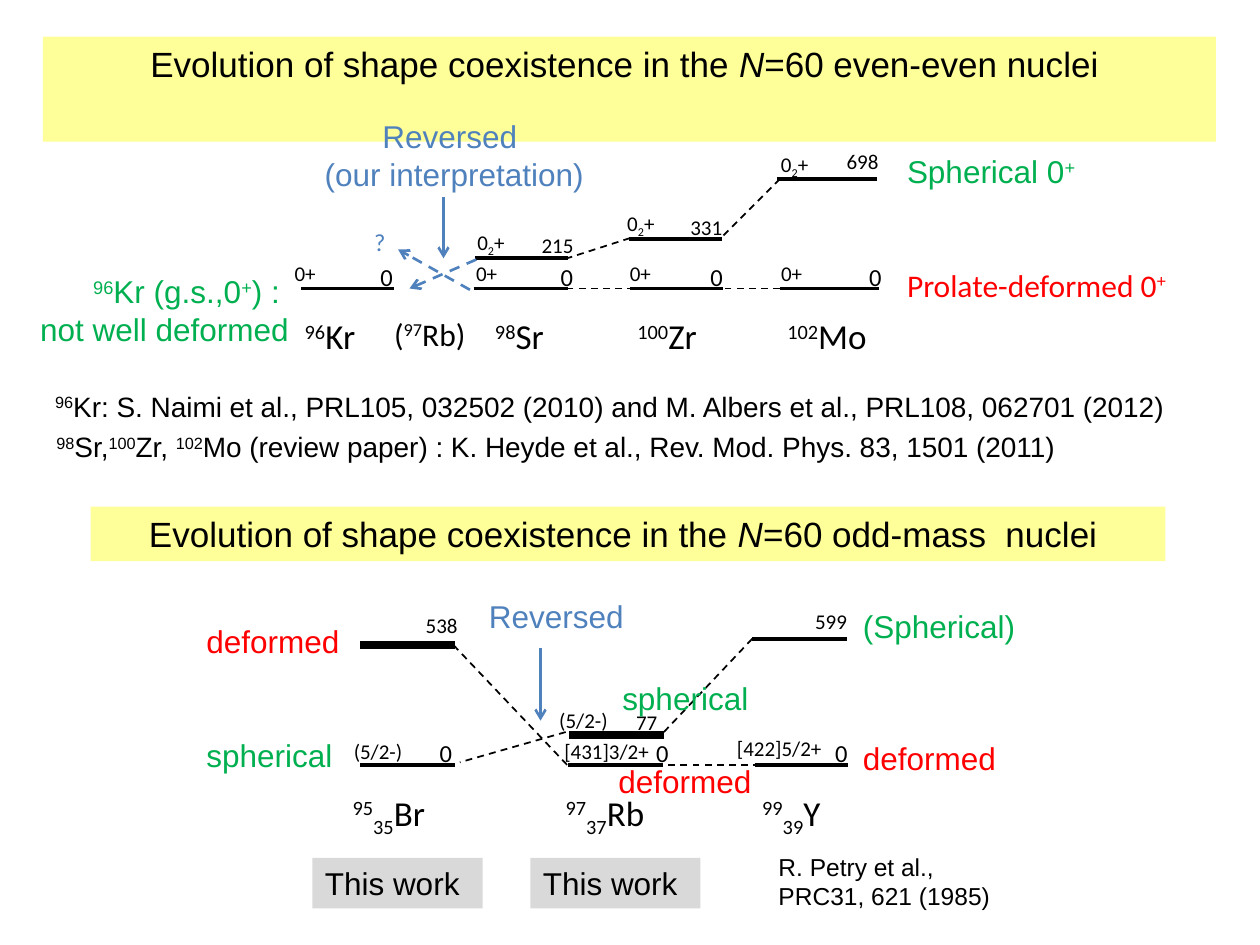
from lxml import etree
from pptx import Presentation
from pptx.dml.color import RGBColor
from pptx.enum.dml import MSO_LINE
from pptx.enum.shapes import MSO_CONNECTOR, MSO_SHAPE
from pptx.enum.text import MSO_ANCHOR, MSO_AUTO_SIZE, PP_ALIGN
from pptx.oxml.ns import qn
from pptx.util import Cm, Pt

STRAIGHT = MSO_CONNECTOR.STRAIGHT
DASH = MSO_LINE.DASH
RECTANGLE = MSO_SHAPE.RECTANGLE
TOP = MSO_ANCHOR.TOP
FIT = MSO_AUTO_SIZE.SHAPE_TO_FIT_TEXT
LEFT, CENTER, RIGHT = PP_ALIGN.LEFT, PP_ALIGN.CENTER, PP_ALIGN.RIGHT

COLORS = {"black": "000000", "red": "FF0000", "green": "00B050",
          "blue": "4F81BD", "yellow": "FFFF99", "gray": "D9D9D9"}
UNIT = 2.54  # the layout grid is in units of 2.54 cm
MARKS = {"^": "30000", "_": "-25000", "*": None}  # super, sub, italic

prs = Presentation()
prs.slide_width, prs.slide_height = Cm(25.4), Cm(19.05)
slide = prs.slides.add_slide(prs.slide_layouts[5])
shapes = slide.shapes


def write(box, text, size, font="Calibri", color="black", align=LEFT, wrap=False):
    """Fill a box; ^sup^, _sub_ and *italic* mark up parts of the text."""
    frame = box.text_frame
    frame.word_wrap, frame.auto_size, frame.vertical_anchor = wrap, FIT, TOP
    for number, content in enumerate(text.split("\n")):
        paragraph = frame.add_paragraph() if number else frame.paragraphs[0]
        paragraph.alignment = align
        mark, pieces = "", [["", ""]]
        for letter in content:
            if letter in MARKS:
                mark = "" if mark else letter
                pieces.append([mark, ""])
            else:
                pieces[-1][1] += letter
        for mark, piece in pieces:
            if not piece:
                continue
            run = paragraph.add_run()
            run.text = piece
            run.font.size, run.font.name = Pt(size), font
            run.font.color.rgb = RGBColor.from_string(COLORS[color])
            if mark == "*":
                run.font.italic = True
            elif mark:
                run.font._element.set("baseline", MARKS[mark])


def draw_line(x1, y1, x2, y2, weight, color="black", dashed=False, arrow=False):
    ends = [Cm(v * UNIT) for v in (x1, y1, x2, y2)]
    connector = shapes.add_connector(STRAIGHT, *ends)
    connector.line.width = Pt(weight)
    connector.line.color.rgb = RGBColor.from_string(COLORS[color])
    if dashed:
        connector.line.dash_style = DASH
    properties = connector._element.spPr
    if arrow:
        etree.SubElement(properties.find(qn("a:ln")), qn("a:tailEnd"), type="arrow")
    etree.SubElement(properties, qn("a:effectLst"))


# Title and the other filled boxes
banner = "Evolution of shape coexistence in the *N*=60 "
panels = [
    (shapes.title, banner + "even-even nuclei ", 0.34, 0.29, 9.31, 20, "yellow", CENTER),
    (None, banner + "odd-mass  nuclei ", 0.72, 4.02, 8.53, 20, "yellow", CENTER),
    (None, "This work", 2.48, 6.81, 1.35, 18, "gray", LEFT),
    (None, "This work", 4.21, 6.81, 1.35, 18, "gray", LEFT),
]
for panel, text, x, y, width, size, fill, align in panels:
    place = [Cm(v * UNIT) for v in (x, y, width, 0.1 + size / 60)]
    if panel is None:
        panel = shapes.add_shape(RECTANGLE, *place)
        panel.shadow.inherit = False
    panel.left, panel.top, panel.width, panel.height = place
    panel.fill.solid()
    panel.fill.fore_color.rgb = RGBColor.from_string(COLORS[fill])
    panel.line.fill.background()
    write(panel, text, size, "Arial", align=align, wrap=True)

# Energy levels: left end, height, length, weight
levels = [
    (2.39, 2.29, 0.74, 2.25), (3.76, 2.29, 0.75, 2.25), (3.77, 2.05, 0.74, 2.25),
    (5, 2.29, 0.74, 2.25), (4.99, 1.9, 0.74, 2.25),
    (6.19, 2.29, 0.79, 2.25), (6.17, 1.42, 0.79, 2.25),
    (2.86, 6.07, 0.75, 2.25), (2.86, 5.12, 0.75, 4.5),
    (4.51, 6.07, 0.75, 2.25), (4.52, 5.83, 0.75, 4.5),
    (5.99, 6.07, 0.74, 2.25), (5.97, 5.07, 0.75, 2.25),
]
for x, y, length, weight in levels:
    draw_line(x, y, x + length, y, weight)

# Dashed links between related levels
links = [
    (6.77, 2.29, 4.21, 2.29), (6.19, 1.42, 5.72, 1.89), (5, 1.89, 4.5, 2.05),
    (6.13, 6.07, 4.97, 6.07), (5.97, 5.07, 5.25, 5.83),
    (4.5, 6.07, 3.59, 5.11), (4.49, 5.81, 3.65, 6.05),
]
for link in links:
    draw_line(*link, 1, dashed=True)

# Blue arrows for the reversed order
arrows = [
    (3.78, 2.06, 3.25, 2.29, True), (3.73, 2.3, 3.16, 1.98, True),
    (3.52, 1.56, 3.52, 2.05, False), (4.29, 5.14, 4.29, 5.72, False),
]
for x1, y1, x2, y2, dashed in arrows:
    draw_line(x1, y1, x2, y2, 1.5, "blue", dashed, arrow=True)

# Level and nucleus labels in Calibri, by size: text, left, top, width
labels = {
    12: [
        ("698", 6.62, 1.13, 0.48), ("331", 5.38, 1.65, 0.48), ("215", 4.2, 1.8, 0.48),
        ("0+", 6.1, 2.02, 0.39), ("0+", 4.9, 2.02, 0.39),
        ("0+", 3.68, 2.02, 0.39), ("0+", 2.24, 2.02, 0.37),
        ("0_2_+", 6.1, 1.15, 0.46), ("0_2_+", 4.88, 1.62, 0.46), ("0_2_+", 3.69, 1.77, 0.46),
        ("599", 6.37, 4.78, 0.48), ("77", 4.95, 5.58, 0.39), ("538", 3.28, 4.81, 0.48),
        ("[422]5/2+", 5.75, 5.79, 0.91), ("[431]3/2+", 4.38, 5.81, 0.91),
        ("(5/2-)", 4.34, 5.57, 0.6), ("(5/2-)", 2.71, 5.81, 0.6),
    ],
    14: [("0", x, 2.03, 0.31) for x in (2.92, 4.35, 5.54, 6.8)]
        + [("0", x, 5.81, 0.31) for x in (3.39, 5.11, 6.53)],
    18: [("(^97^Rb)", 3.03, 2.45, 0.8)],
    20: [
        ("^96^Kr", 2.32, 2.45, 0.63), ("^98^Sr", 3.83, 2.45, 0.62),
        ("^100^Zr", 4.96, 2.45, 0.72), ("^102^Mo", 6.15, 2.45, 0.87),
        ("^95^_35_Br", 2.7, 6.23, 0.83), ("^97^_37_Rb", 4.39, 6.23, 0.88),
        ("^99^_39_Y", 5.95, 6.23, 0.72),
    ],
}
for size, group in labels.items():
    for text, x, y, width in group:
        place = [Cm(v * UNIT) for v in (x, y, width, 0.1 + size / 60)]
        write(shapes.add_textbox(*place), text, size)

# Comments and references: text, left, top, width, lines, then the format
comments = [
    ("Prolate-deformed 0^+^", 7.1, 2.06, 2.39, 1, 18, "Calibri", "red", LEFT, False),
    ("?", 2.87, 1.75, 0.29, 1, 14, "Calibri", "blue", LEFT, False),
    ("Spherical 0^+^", 7.1, 1.16, 1.69, 1, 18, "Arial", "green", LEFT, True),
    ("Reversed \n(our interpretation)", 2.45, 0.88, 2.31, 2, 18, "Arial", "blue", CENTER, True),
    ("^96^Kr (g.s.,0^+^) : \nnot well deformed", 0.16, 2.11, 2.23, 2, 18, "Arial", "green",
     RIGHT, True),
    ("Reversed ", 3.74, 4.69, 1.42, 1, 18, "Arial", "blue", CENTER, True),
    ("(Spherical)", 6.75, 4.77, 1.49, 1, 18, "Arial", "green", LEFT, False),
    ("deformed", 1.54, 4.89, 1.27, 1, 18, "Arial", "red", LEFT, False),
    ("spherical", 1.54, 5.79, 1.21, 1, 18, "Arial", "green", LEFT, False),
    ("deformed", 6.75, 5.82, 1.27, 1, 18, "Arial", "red", LEFT, False),
    ("spherical", 4.84, 5.34, 1.32, 1, 18, "Arial", "green", LEFT, False),
    ("deformed", 4.81, 6, 1.27, 1, 18, "Arial", "red", LEFT, False),
    ("^96^Kr: S. Naimi et al., PRL105, 032502 (2010) and M. Albers et al., "
     "PRL108, 062701 (2012)", 0.34, 3.04, 9.2, 1, 16, "Arial", "black", LEFT, False),
    ("^98^Sr,^100^Zr, ^102^Mo (review paper) : K. Heyde et al., "
     "Rev. Mod. Phys. 83, 1501 (2011)", 0.35, 3.36, 8.64, 1, 16, "Arial", "black", LEFT, True),
    ("R. Petry et al., PRC31, 621 (1985)", 6.08, 6.71, 2.01, 2, 14, "Arial", "black", LEFT, True),
]
for text, x, y, width, lines, size, *style in comments:
    place = [Cm(v * UNIT) for v in (x, y, width, 0.1 + lines * size / 60)]
    write(shapes.add_textbox(*place), text, size, *style)

prs.save("out.pptx")
